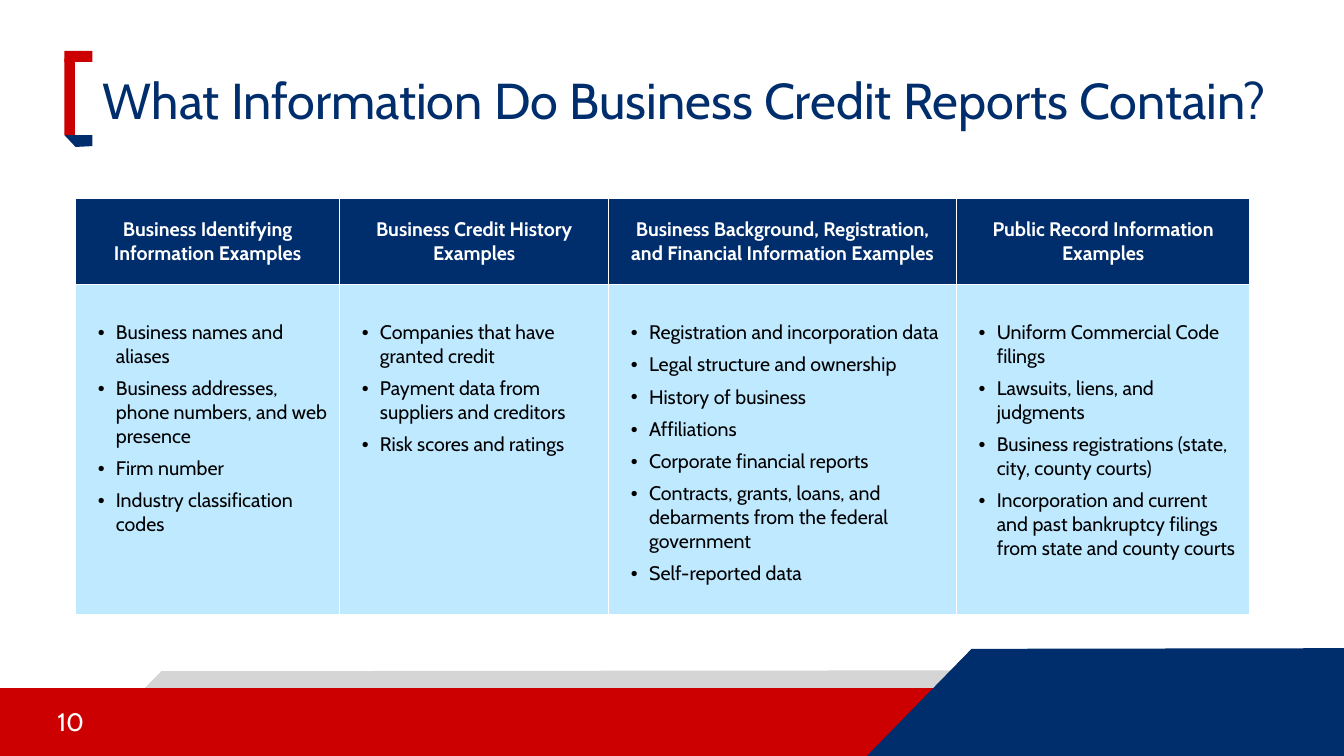
from lxml import etree
from pptx import Presentation
from pptx.dml.color import RGBColor
from pptx.enum.shapes import MSO_SHAPE
from pptx.enum.text import MSO_ANCHOR, MSO_AUTO_SIZE, PP_ALIGN
from pptx.oxml.ns import qn
from pptx.util import Pt

RECTANGLE = MSO_SHAPE.RECTANGLE
TOP, MIDDLE = MSO_ANCHOR.TOP, MSO_ANCHOR.MIDDLE
LEFT, CENTER = PP_ALIGN.LEFT, PP_ALIGN.CENTER
NO_FIT = MSO_AUTO_SIZE.NONE

NAVY = RGBColor(0x00, 0x2E, 0x6D)
RED = RGBColor(0xCC, 0x00, 0x00)
GRAY = RGBColor(0xD5, 0xD5, 0xD5)
SKY = RGBColor(0xBF, 0xE9, 0xFF)
WHITE = RGBColor(0xFF, 0xFF, 0xFF)
BLACK = RGBColor(0x00, 0x00, 0x00)

TITLE = "What Information Do Business Credit Reports Contain?"
PAGE_NUMBER = "10"
COLUMNS = [
    ("Business Identifying Information Examples", 188.64, [
        "Business names and aliases",
        "Business addresses, phone numbers, and web presence",
        "Firm number",
        "Industry classification codes",
    ]),
    ("Business Credit History Examples", 192.24, [
        "Companies that have granted credit",
        "Payment data from suppliers and creditors",
        "Risk scores and ratings",
    ]),
    ("Business Background, Registration, and Financial Information Examples", 248.4, [
        "Registration and incorporation data",
        "Legal structure and ownership",
        "History of business",
        "Affiliations",
        "Corporate financial reports",
        "Contracts, grants, loans, and debarments from the federal government",
        "Self-reported data",
    ]),
    ("Public Record Information Examples", 209.52, [
        "Uniform Commercial Code filings",
        "Lawsuits, liens, and judgments",
        "Business registrations (state, city, county courts)",
        "Incorporation and current and past bankruptcy filings from state and county courts",
    ]),
]
ROW_HEIGHTS = (61.2, 236.16)
TABLE_LEFT, TABLE_TOP = 54, 141.84

FOOTER_SHADOW = [(115.2, 479.5), (734.4, 478.8), (734.4, 514), (81.4, 514)]
FOOTER_BAR = (0, 491.5, 960, 48.5)
FOOTER_CORNER = [(694, 463.5), (960, 463), (960, 540), (619.2, 540)]
BRACKET_SIDE = [(46, 41.8), (53.5, 41.8), (53.5, 97.9), (46, 96.5)]
BRACKET_TOP = (46, 36.3, 20, 8)
BRACKET_FOOT = [(46, 96.5), (66, 96.5), (66, 104.4), (54, 105)]

TITLE_FONT = {"name": "Cabin", "size": Pt(36), "bold": False}
NUMBER_FONT = {"name": "Cabin", "size": Pt(18), "bold": False}
HEADER_FONT = {"name": "Cabin", "size": Pt(14), "bold": True}
ITEM_FONT = {"name": "Cabin", "size": Pt(14), "bold": False}


def apply(target, values):
    for name, value in values.items():
        setattr(target, name, value)


def format_font(font, values, color):
    apply(font, values)
    font.color.rgb = color


def paint(shape, color):
    shape.shadow.inherit = False
    shape.fill.solid()
    shape.fill.fore_color.rgb = color
    shape.line.fill.background()


def add_block(page, bounds, color):
    paint(page.shapes.add_shape(RECTANGLE, *map(Pt, bounds)), color)


def add_outline(page, points, color):
    corners = [(Pt(x), Pt(y)) for x, y in points]
    builder = page.shapes.build_freeform(*corners[0])
    builder.add_line_segments(corners[1:], close=True)
    paint(builder.convert_to_shape(), color)


def format_cell(cell, color, top_margin, anchor):
    properties = cell._tc.get_or_add_tcPr()
    for edge in ("a:lnL", "a:lnR", "a:lnT", "a:lnB"):
        line = etree.SubElement(properties, qn(edge), w=str(Pt(1)))
        fill = etree.SubElement(line, qn("a:solidFill"))
        etree.SubElement(fill, qn("a:srgbClr"), val=str(WHITE))
    cell.fill.solid()
    cell.fill.fore_color.rgb = color
    apply(cell, {"margin_left": Pt(6.5), "margin_right": Pt(6.5),
                 "margin_top": Pt(top_margin), "margin_bottom": Pt(3),
                 "vertical_anchor": anchor})


def add_bullet(para):
    properties = para._p.get_or_add_pPr()
    properties.set("marL", str(Pt(22.32)))
    properties.set("indent", str(Pt(-12.96)))
    etree.SubElement(properties, qn("a:buFont"), typeface="Arial")
    etree.SubElement(properties, qn("a:buChar"), char="•")


def add_title(page):
    title = page.shapes.title
    apply(title, {"left": Pt(66.24), "top": Pt(50.4),
                  "width": Pt(881.28), "height": Pt(74.88)})
    frame = title.text_frame
    frame.text = TITLE
    apply(frame, {"vertical_anchor": TOP, "word_wrap": True, "auto_size": NO_FIT})
    para = frame.paragraphs[0]
    apply(para, {"alignment": LEFT, "line_spacing": 0.9, "space_before": Pt(0)})
    format_font(para.runs[0].font, TITLE_FONT, NAVY)


def add_page_number(page):
    box = page.shapes.add_textbox(Pt(33.84), Pt(501.1), Pt(216), Pt(28.8))
    frame = box.text_frame
    frame.text = PAGE_NUMBER
    apply(frame, {"vertical_anchor": MIDDLE, "word_wrap": True})
    format_font(frame.paragraphs[0].runs[0].font, NUMBER_FONT, WHITE)


def add_report_table(page):
    width = sum(column[1] for column in COLUMNS)
    table = page.shapes.add_table(
        len(ROW_HEIGHTS), len(COLUMNS), Pt(TABLE_LEFT), Pt(TABLE_TOP),
        Pt(width), Pt(sum(ROW_HEIGHTS))).table
    for row, height in zip(table.rows, ROW_HEIGHTS):
        row.height = Pt(height)
    for index, (heading, column_width, items) in enumerate(COLUMNS):
        table.columns[index].width = Pt(column_width)
        header, body = table.cell(0, index), table.cell(1, index)
        format_cell(header, NAVY, 3, MIDDLE)
        format_cell(body, SKY, 26, TOP)
        header.text = heading
        para = header.text_frame.paragraphs[0]
        para.alignment = CENTER
        format_font(para.runs[0].font, HEADER_FONT, WHITE)
        body.text = "\n".join(items)
        for number, para in enumerate(body.text_frame.paragraphs):
            if number:
                para.space_before = Pt(6)
            add_bullet(para)
            format_font(para.font, ITEM_FONT, BLACK)
            format_font(para.runs[0].font, ITEM_FONT, BLACK)


def main():
    deck = Presentation()
    deck.slide_width, deck.slide_height = Pt(960), Pt(540)
    page = deck.slides.add_slide(deck.slide_layouts[5])
    add_outline(page, FOOTER_SHADOW, GRAY)
    add_block(page, FOOTER_BAR, RED)
    add_outline(page, FOOTER_CORNER, NAVY)
    add_outline(page, BRACKET_SIDE, RED)
    add_block(page, BRACKET_TOP, RED)
    add_outline(page, BRACKET_FOOT, NAVY)
    add_page_number(page)
    add_title(page)
    add_report_table(page)
    deck.save("out.pptx")


if __name__ == "__main__":
    main()
